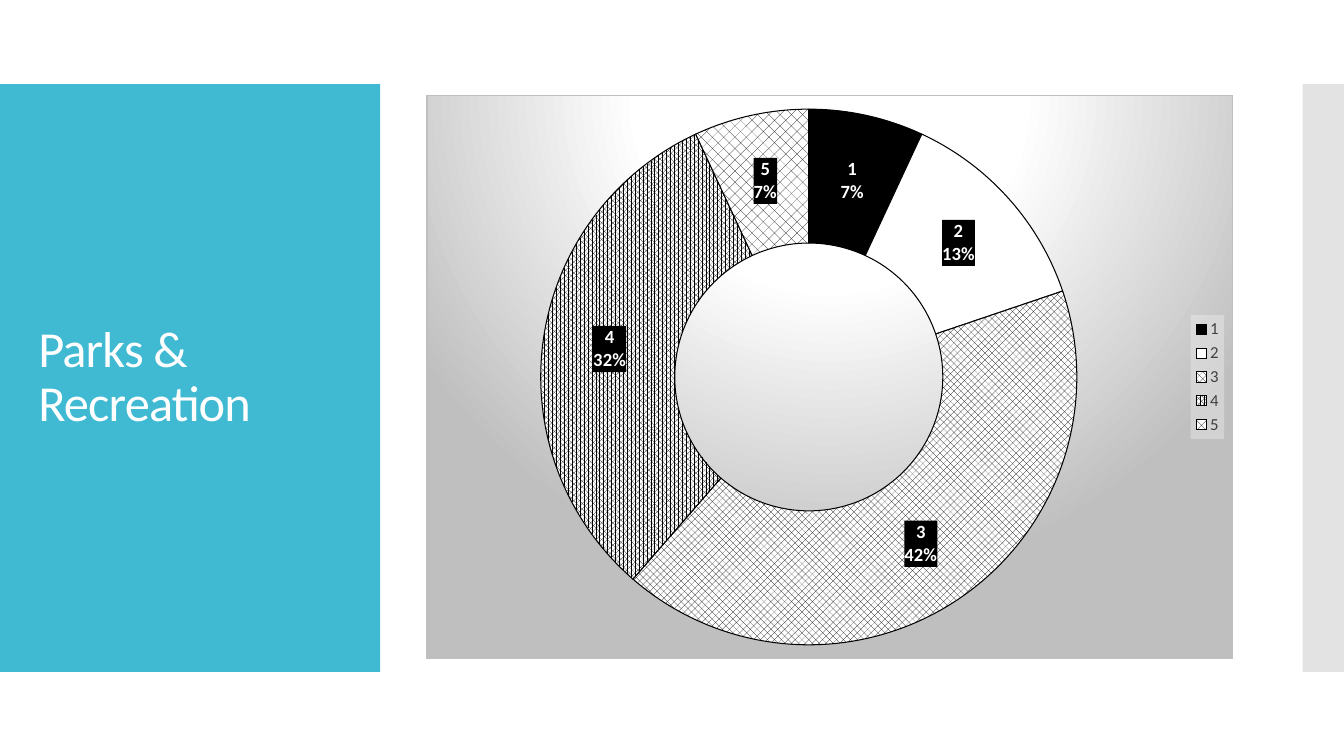
from lxml.etree import SubElement
from pptx import Presentation
from pptx.chart.data import CategoryChartData
from pptx.dml.color import RGBColor
from pptx.enum.chart import XL_CHART_TYPE, XL_LEGEND_POSITION
from pptx.enum.dml import MSO_PATTERN
from pptx.enum.shapes import MSO_SHAPE
from pptx.enum.text import MSO_ANCHOR, PP_ALIGN
from pptx.oxml import parse_xml
from pptx.oxml.ns import nsdecls, qn
from pptx.util import Inches, Pt

FONT = "Calibri"
COLORS = {"panel": "40BAD2", "strip": "C8C8C8", "white": "FFFFFF", "black": "000000",
          "silver": "BFBFBF", "legend": "F2F2F2", "legend_text": "404040"}
SHARES = {"1": 7, "2": 13, "3": 42, "4": 32, "5": 7}
# Solid colour or pattern of each ring segment
SEGMENT_FILLS = ["black", "white", MSO_PATTERN.PERCENT_50,
                 MSO_PATTERN.PERCENT_75, MSO_PATTERN.PERCENT_25]


def color(name):
    return RGBColor.from_string(COLORS[name])


def set_format(target, values):
    for name, value in values.items():
        setattr(target, name, value)


def set_font(font, size, color_name, bold=False):
    set_format(font, {"name": FONT, "size": Pt(size), "bold": bold})
    font.color.rgb = color(color_name)


def solid_xml(name, alpha=100):
    return (f'<a:solidFill><a:srgbClr val="{COLORS[name]}">'
            f'<a:alpha val="{alpha * 1000}"/></a:srgbClr></a:solidFill>')


def set_chart_box(element, content):
    """Give a chart part its background, placed just before its text format."""
    box = parse_xml(f'<c:spPr {nsdecls("c", "a")}>{content}</c:spPr>')
    element.find(qn("c:txPr")).addprevious(box)


def add_band(slide, box, color_name, alpha=100):
    band = slide.shapes.add_shape(MSO_SHAPE.RECTANGLE, *box)
    band.shadow.inherit = False
    band.fill.solid()
    band.fill.fore_color.rgb = color(color_name)
    band.line.fill.background()
    if alpha < 100:
        srgb = band._element.spPr.find(qn("a:solidFill")).find(qn("a:srgbClr"))
        SubElement(srgb, qn("a:alpha"), val=str(alpha * 1000))


def add_title_panel(slide, box):
    left, top, width, height = box
    add_band(slide, box, "panel")
    # The title sits on the panel, so it comes to the front
    title = slide.shapes.title
    slide.shapes._spTree.append(title._element)
    inset_x, inset_y = Inches(0.28), Inches(0.4)
    set_format(title, {"left": left + inset_x, "top": top + inset_y,
                       "width": width - inset_x - Inches(0.27),
                       "height": height - 2 * inset_y})
    frame = title.text_frame
    frame.text = "Parks & Recreation"
    set_format(frame, {"word_wrap": True, "vertical_anchor": MSO_ANCHOR.MIDDLE})
    paragraph = frame.paragraphs[0]
    set_format(paragraph, {"alignment": PP_ALIGN.LEFT, "line_spacing": 0.9})
    run = paragraph.runs[0]
    set_font(run.font, 36, "white")
    run.font._element.set("spc", "-60")


def add_share_chart(slide, box):
    data = CategoryChartData()
    data.categories = list(SHARES)
    data.add_series("Series 1", SHARES.values())
    chart = slide.shapes.add_chart(XL_CHART_TYPE.DOUGHNUT, *box, data).chart
    set_format(chart, {"has_title": False, "has_legend": True})
    set_font(chart.font, 10, "black")

    # Backdrop: light from above the chart
    stops = "".join(f'<a:gs pos="{position * 1000}"><a:srgbClr val="{COLORS[name]}"/></a:gs>'
                    for position, name in [(0, "white"), (39, "white"), (100, "silver")])
    set_chart_box(chart._chartSpace,
                  f'<a:gradFill><a:gsLst>{stops}</a:gsLst><a:path path="circle">'
                  '<a:fillToRect l="50000" t="-80000" r="50000" b="180000"/></a:path>'
                  f'</a:gradFill><a:ln w="9525">{solid_xml("silver")}</a:ln>')

    # Legend
    set_format(chart.legend, {"position": XL_LEGEND_POSITION.RIGHT,
                              "include_in_layout": False})
    set_font(chart.legend.font, 12, "legend_text")
    set_chart_box(chart.legend._element, solid_xml("legend", 39))

    # Ring segments
    plot = chart.plots[0]
    plot.vary_by_categories = True
    series = plot.series[0]
    for index, segment_fill in enumerate(SEGMENT_FILLS):
        segment = series.points[index].format
        if segment_fill in COLORS:
            segment.fill.solid()
            segment.fill.fore_color.rgb = color(segment_fill)
        else:
            segment.fill.patterned()
            segment.fill.pattern = segment_fill
            segment.fill.fore_color.rgb = color("black")
            segment.fill.back_color.rgb = color("white")
        segment.line.color.rgb = color("black")
        segment.line.width = Pt(0.75)

    # Labels
    labels = series.data_labels
    set_format(labels, {"show_category_name": True, "show_percentage": True,
                        "show_value": False, "show_legend_key": False})
    set_font(labels.font, 13.3, "white", bold=True)
    set_chart_box(labels._element, solid_xml("black"))


def main():
    presentation = Presentation()
    set_format(presentation, {"slide_width": Inches(13.33), "slide_height": Inches(7.5)})
    slide = presentation.slides.add_slide(presentation.slide_layouts[5])
    width, height = presentation.slide_width, presentation.slide_height

    band_top, band_height = height // 9, height * 7 // 9
    strip_width = Inches(0.41)
    add_band(slide, (width - strip_width, band_top, strip_width, band_height), "strip", 50)
    add_title_panel(slide, (0, band_top, Inches(3.77), band_height))
    add_share_chart(slide, (Inches(4.23), Inches(0.94), Inches(8), Inches(5.6)))
    presentation.save("out.pptx")


if __name__ == "__main__":
    main()
